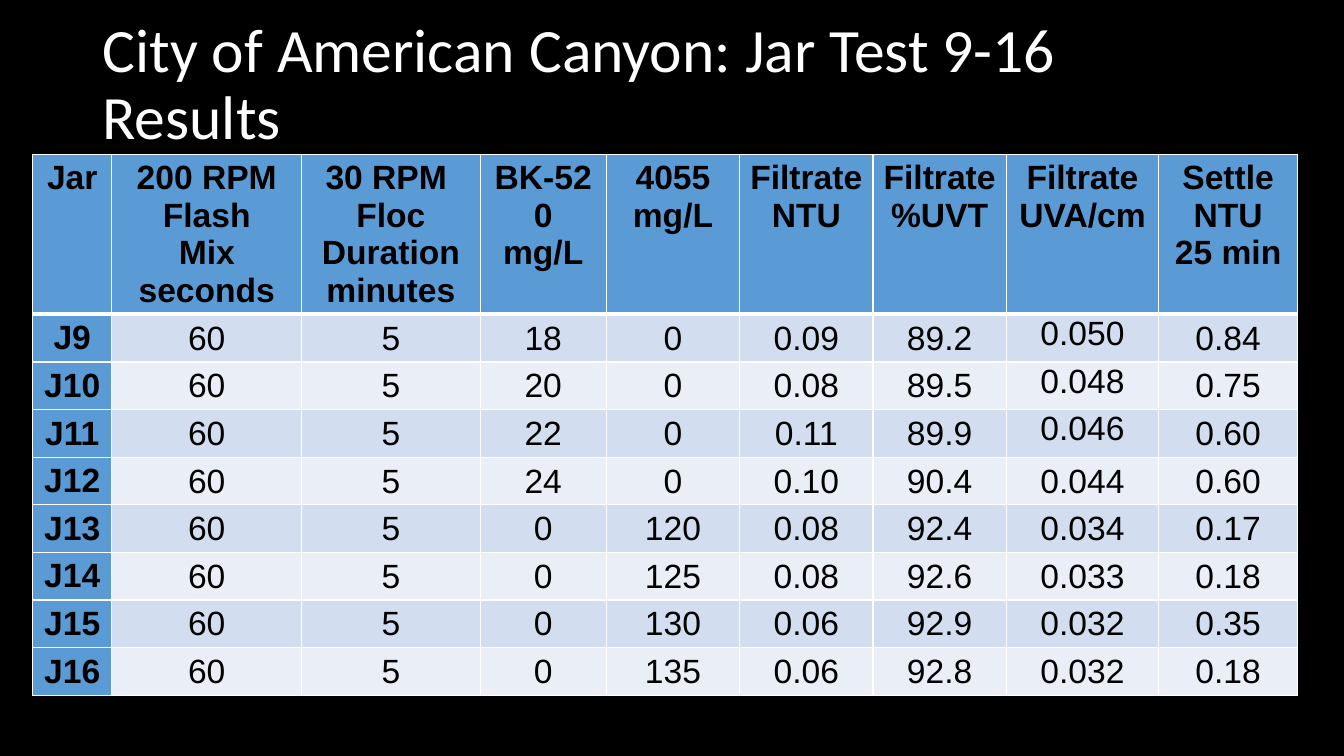
from lxml import etree
from pptx import Presentation
from pptx.dml.color import RGBColor
from pptx.enum.text import MSO_ANCHOR, MSO_AUTO_SIZE, PP_ALIGN
from pptx.oxml.ns import qn
from pptx.util import Cm, Pt

TOP, MIDDLE = MSO_ANCHOR.TOP, MSO_ANCHOR.MIDDLE
LEFT, CENTER = PP_ALIGN.LEFT, PP_ALIGN.CENTER
NO_AUTOFIT = MSO_AUTO_SIZE.NONE

BLACK, WHITE, BLUE = "000000", "FFFFFF", "5B9BD5"
BANDS = ("D2DEEF", "EAEFF7")
COL_WIDTHS = (2, 4.78, 4.5, 3.18, 3.36, 3.36, 3.36, 3.84, 3.5)
HEADER_HEIGHT, ROW_HEIGHT = 4.03, 1.2
UVA_COL, TOP_ANCHORED_ROWS = 7, (1, 2, 3)

HEADERS = (
    "Jar", "200 RPM\nFlash\nMix\nseconds", "30 RPM \nFloc\nDuration\nminutes",
    "BK-520\nmg/L", "4055\nmg/L", "Filtrate\nNTU", "Filtrate\n%UVT",
    "Filtrate\nUVA/cm", "Settle\nNTU\n25 min",
)
RESULTS = (
    ("J9", "60", "5", "18", "0", "0.09", "89.2", "0.050", "0.84"),
    ("J10", "60", "5", "20", "0", "0.08", "89.5", "0.048", "0.75"),
    ("J11", "60", "5", "22", "0", "0.11", "89.9", "0.046", "0.60"),
    ("J12", "60", "5", "24", "0", "0.10", "90.4", "0.044", "0.60"),
    ("J13", "60", "5", "0", "120", "0.08", "92.4", "0.034", "0.17"),
    ("J14", "60", "5", "0", "125", "0.08", "92.6", "0.033", "0.18"),
    ("J15", "60", "5", "0", "130", "0.06", "92.9", "0.032", "0.35"),
    ("J16", "60", "5", "0", "135", "0.06", "92.8", "0.032", "0.18"),
)


def rgb(value):
    """Return the colour for a hex string."""
    return RGBColor.from_string(value)


def format_text(tf, font, size, color, align, bold=False):
    """Format every paragraph and run of a text frame."""
    for p in tf.paragraphs:
        p.alignment = align
        for r in p.runs:
            r.font.name, r.font.size, r.font.bold = font, Pt(size), bold
            r.font.color.rgb = rgb(color)


def set_borders(cell, color, bottom):
    """Draw 1 pt borders round a cell, with its own width at the bottom."""
    tcPr = cell._tc.get_or_add_tcPr()
    for side, width in (("L", 1), ("R", 1), ("T", 1), ("B", bottom)):
        ln = etree.SubElement(tcPr, qn(f"a:ln{side}"), w=str(Pt(width)))
        fill = etree.SubElement(ln, qn("a:solidFill"))
        etree.SubElement(fill, qn("a:srgbClr"), val=color)


def add_title(s, text):
    """Place and format the slide title."""
    title = s.shapes.title
    title.left, title.top = Cm(2.33), Cm(0.33)
    title.width, title.height = Cm(29.21), Cm(3.68)
    tf = title.text_frame
    tf.text = text
    tf.auto_size, tf.vertical_anchor = NO_AUTOFIT, MIDDLE
    tf.paragraphs[0].line_spacing = 0.9
    format_text(tf, "Calibri", 44, WHITE, LEFT)


def fill_cell(cell, text, row, col):
    """Write one table cell in the style of its row and column."""
    heading = row == 0 or col == 0
    cell.text_frame.text = text
    format_text(cell.text_frame, "Arial", 24, BLACK, CENTER, heading)
    set_borders(cell, WHITE, 3 if row == 0 else 1)
    cell.fill.solid()
    cell.fill.fore_color.rgb = rgb(BLUE if heading else BANDS[(row - 1) % 2])
    if not heading:
        cell.margin_left = cell.margin_right = cell.margin_top = Cm(0.02)
        cell.margin_bottom = 0
        raised = col == UVA_COL and row in TOP_ANCHORED_ROWS
        cell.vertical_anchor = TOP if raised else MIDDLE


def add_results_table(s, rows):
    """Add the jar test table."""
    height = HEADER_HEIGHT + ROW_HEIGHT * (len(rows) - 1)
    table = s.shapes.add_table(len(rows), len(COL_WIDTHS), Cm(0.82), Cm(3.89),
                               Cm(sum(COL_WIDTHS)), Cm(height)).table
    table.first_col = True
    for column, width in zip(table.columns, COL_WIDTHS):
        column.width = Cm(width)
    for i, values in enumerate(rows):
        table.rows[i].height = Cm(ROW_HEIGHT if i else HEADER_HEIGHT)
        for j, text in enumerate(values):
            fill_cell(table.cell(i, j), text, i, j)


def main():
    """Build and save the slide."""
    prs = Presentation()
    prs.slide_width, prs.slide_height = Cm(33.87), Cm(19.05)
    s = prs.slides.add_slide(prs.slide_layouts[5])
    s.background.fill.solid()
    s.background.fill.fore_color.rgb = rgb(BLACK)
    add_title(s, "City of American Canyon: Jar Test 9-16 Results")
    add_results_table(s, (HEADERS, *RESULTS))
    prs.save("out.pptx")


if __name__ == "__main__":
    main()
